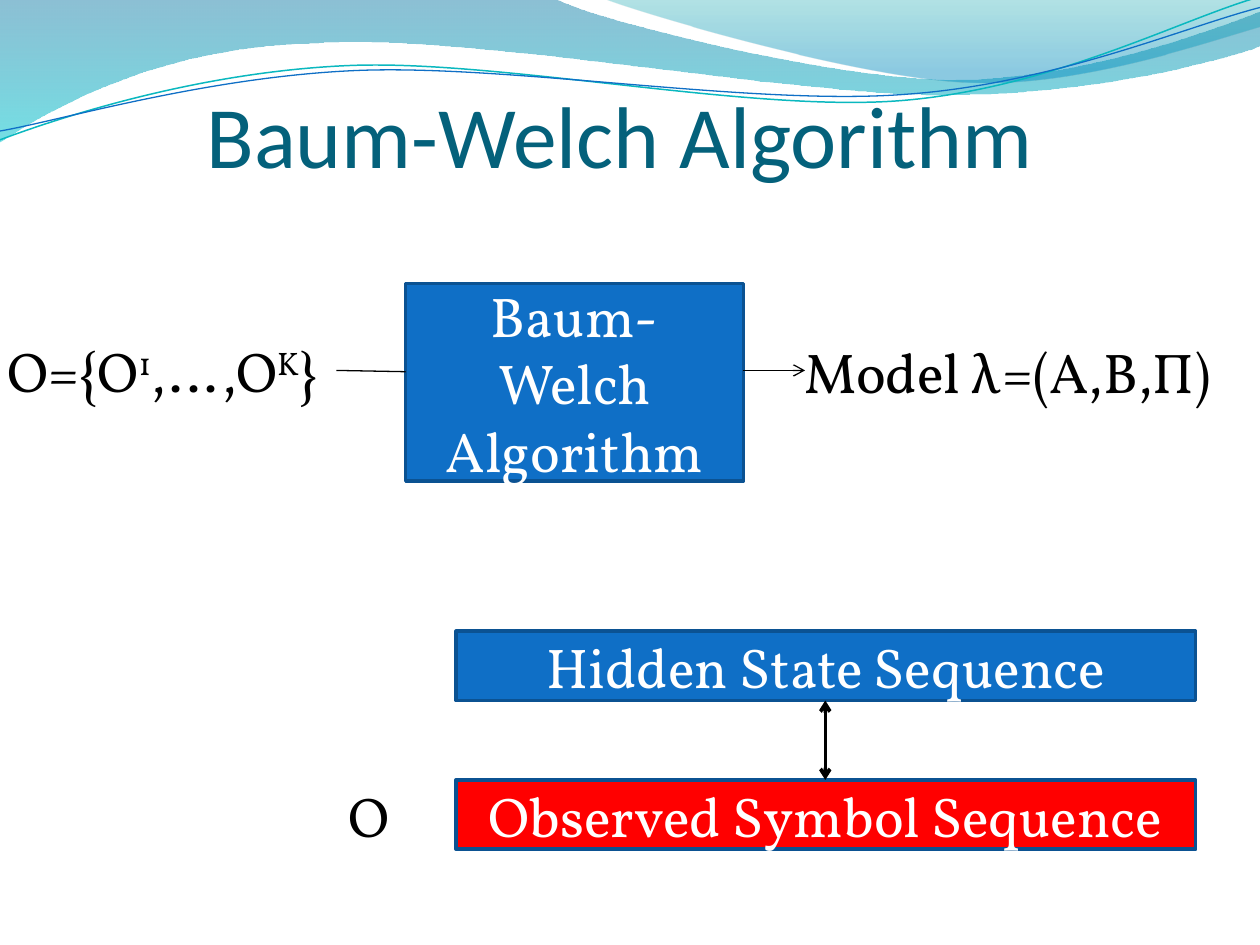
from dataclasses import dataclass
from math import cos, radians, sin

from lxml import etree
from pptx import Presentation
from pptx.dml.color import RGBColor
from pptx.enum.shapes import MSO_CONNECTOR, MSO_SHAPE
from pptx.enum.text import MSO_ANCHOR, MSO_AUTO_SIZE, PP_ALIGN
from pptx.oxml.ns import qn
from pptx.util import Inches, Pt

RECTANGLE = MSO_SHAPE.RECTANGLE
STRAIGHT = MSO_CONNECTOR.STRAIGHT
CENTER, LEFT = PP_ALIGN.CENTER, PP_ALIGN.LEFT
MIDDLE, TOP, BOTTOM = MSO_ANCHOR.MIDDLE, MSO_ANCHOR.TOP, MSO_ANCHOR.BOTTOM
GROW = MSO_AUTO_SIZE.SHAPE_TO_FIT_TEXT

COLORS = {
    "title": "04617B", "blue": "0F6FC6", "border": "0B5292", "red": "FF0000",
    "white": "FFFFFF", "black": "000000", "teal": "0AB8BF",
    "deep_blue": "0074A1", "cyan": "00C6CF", "sea": "00A1A9", "sky": "008BBF",
}
BODY_FONT = {"name": "Vollkorn", "size": Pt(32)}
TITLE_FONT = {"name": "Calibri", "size": Pt(50)}
SUPERSCRIPT = "30000"
TILT = 2.7  # degrees the wave lines are turned counter-clockwise

Point = tuple[float, float]
Run = tuple[str, bool]  # wording, whether it is raised


@dataclass
class Wave:
    """An outline: a start, then segments of one point (line) or three (Bézier)."""
    start: Point
    segments: list[tuple[Point, ...]]
    stops: tuple[tuple[float, str, int], ...] = ()  # position, colour, opacity %
    line: str = ""
    width: float = 0
    pivot: Point = (0, 0)


@dataclass
class Box:
    left: float
    top: float
    width: float
    height: float
    fill: str
    lines: list[str]


@dataclass
class Label:
    left: float
    top: float
    width: float
    height: float
    runs: list[Run]
    wrap: bool = False


@dataclass
class Link:
    start: Point
    end: Point
    width: float = 0.75
    arrow_ends: tuple[str, ...] = ()


WAVES = [
    Wave((0, 0), [
        ((4.4, -0.01),),
        ((4.76, 0.17), (6.64, 0.63), (7.58, 0.63)),
        ((8.53, 0.63), (9.58, 0.26), (10, 0.09)),
        ((10.01, 0.36),),
        ((9.83, 0.44), (8.7, 0.76), (7.46, 0.75)),
        ((6.22, 0.75), (3.82, 0.28), (2.57, 0.34)),
        ((1.29, 0.36), (0.46, 0.83), (-0.01, 1.13)),
        ((0, 0),),
    ], stops=((0, "deep_blue", 45), (1, "cyan", 55))),
    Wave((4.79, -0.01), [
        ((5.09, 0.11), (6.82, 0.62), (7.69, 0.65)),
        ((8.56, 0.69), (9.61, 0.32), (10, 0.21)),
        ((10, 0),),
        ((4.79, -0.01),),
    ], stops=((0, "sea", 30), (0.8, "sky", 45))),
    Wave((0, 1.11), [
        ((0.48, 0.93), (1.58, 0.57), (2.77, 0.52)),
        ((3.95, 0.47), (5.93, 0.89), (7.13, 0.8)),
        ((8.33, 0.71), (9.38, 0.15), (9.98, -0.02)),
    ], line="teal", width=0.85, pivot=(4.99, 0.57)),
    Wave((0, 1.04), [
        ((0.47, 0.96), (1.64, 0.61), (2.83, 0.56)),
        ((4.03, 0.51), (5.97, 0.84), (7.17, 0.75)),
        ((8.36, 0.67), (9.41, 0.21), (10, 0.06)),
    ], line="blue", width=0.75, pivot=(5, 0.59)),
]
DIAGRAM = [
    Box(3.22, 2.25, 2.68, 1.57, "blue", ["Baum-", "Welch", "Algorithm"]),
    Label(-0.04, 2.62, 2.82, 0.64, [("O={O", False), ("1", True), (",…,O", False),
                                    ("K", True), ("}", False)]),
    Link((2.67, 2.94), (3.22, 2.95)),
    Link((5.9, 2.94), (6.39, 2.94), arrow_ends=("tailEnd",)),
    Label(6.29, 2.63, 3.58, 0.64, [("Model λ=(A,B,Π)", False)], wrap=True),
    Box(3.62, 5.01, 5.87, 0.55, "blue", ["Hidden State Sequence"]),
    Box(3.62, 6.19, 5.87, 0.55, "red", ["Observed Symbol Sequence"]),
    Link((6.55, 5.56), (6.55, 6.19), 2, ("headEnd", "tailEnd")),
    Label(2.67, 6.15, 0.55, 0.64, [("O", False)]),
]


def rgb(color: str) -> RGBColor:
    return RGBColor.from_string(COLORS[color])


def turn(point: Point, pivot: Point, degrees: float) -> Point:
    x, y = point[0] - pivot[0], point[1] - pivot[1]
    c, s = cos(radians(degrees)), sin(radians(degrees))
    return pivot[0] + x * c - y * s, pivot[1] + x * s + y * c


def bend(shape, segments: list[tuple[Point, ...]]) -> None:
    """Merge the three straight steps of each Bézier segment into one curve."""
    steps = iter(list(shape._element.spPr.iter(qn("a:lnTo"))))
    for segment in segments:
        first, *others = [next(steps) for _ in segment]
        if others:
            first.tag = qn("a:cubicBezTo")
            for step in others:
                first.append(step[0])
                step.getparent().remove(step)


def add_wave(slide, wave: Wave) -> None:
    tilt = 0 if wave.stops else TILT
    points = [wave.start] + [point for segment in wave.segments for point in segment]
    corners = [(Inches(x), Inches(y))
               for x, y in (turn(point, wave.pivot, tilt) for point in points)]
    builder = slide.shapes.build_freeform(*corners[0])
    builder.add_line_segments(corners[1:], close=bool(wave.stops))
    shape = builder.convert_to_shape()
    bend(shape, wave.segments)
    shape.rotation = -tilt
    shape.shadow.inherit = False
    if not wave.stops:
        shape.fill.background()
        shape.line.color.rgb = rgb(wave.line)
        shape.line.width = Pt(wave.width)
        return
    shape.line.fill.background()
    shape.fill.gradient()
    shape.fill.gradient_angle = 270
    for stop, (position, color, _) in zip(shape.fill.gradient_stops, wave.stops):
        stop.position = position
        stop.color.rgb = rgb(color)
    for node, (_, _, opacity) in zip(shape._element.spPr.iter(qn("a:srgbClr")), wave.stops):
        etree.SubElement(node, qn("a:alpha")).set("val", str(opacity * 1000))


def write(frame, paragraphs: list[list[Run]], font: dict, color: str, align, **frame_format) -> None:
    for attribute, value in frame_format.items():
        setattr(frame, attribute, value)
    for index, runs in enumerate(paragraphs):
        paragraph = frame.add_paragraph() if index else frame.paragraphs[0]
        paragraph.alignment = align
        for wording, raised in runs:
            run = paragraph.add_run()
            run.text = wording
            for attribute, value in font.items():
                setattr(run.font, attribute, value)
            run.font.color.rgb = rgb(color)
            if raised:
                run._r.get_or_add_rPr().set("baseline", SUPERSCRIPT)


def add_title(slide, wording: str) -> None:
    title = slide.shapes.add_textbox(Inches(0.5), Inches(0.5), Inches(9), Inches(0.98))
    write(title.text_frame, [[(wording, False)]], TITLE_FONT, "title", CENTER,
          word_wrap=True, vertical_anchor=BOTTOM, margin_left=0, margin_right=0,
          margin_top=Inches(0.05), margin_bottom=0)


def add_box(slide, box: Box) -> None:
    shape = slide.shapes.add_shape(RECTANGLE, Inches(box.left), Inches(box.top),
                                   Inches(box.width), Inches(box.height))
    shape.shadow.inherit = False
    shape.fill.solid()
    shape.fill.fore_color.rgb = rgb(box.fill)
    shape.line.color.rgb = rgb("border")
    shape.line.width = Pt(2)
    write(shape.text_frame, [[(line, False)] for line in box.lines], BODY_FONT, "white",
          CENTER, word_wrap=True, vertical_anchor=MIDDLE)


def add_label(slide, label: Label) -> None:
    textbox = slide.shapes.add_textbox(Inches(label.left), Inches(label.top),
                                       Inches(label.width), Inches(label.height))
    write(textbox.text_frame, [label.runs], BODY_FONT, "black", LEFT,
          word_wrap=label.wrap, vertical_anchor=TOP, auto_size=GROW)


def add_link(slide, link: Link) -> None:
    ends = [Inches(value) for value in link.start + link.end]
    connector = slide.shapes.add_connector(STRAIGHT, *ends)
    connector.line.color.rgb = rgb("black")
    connector.line.width = Pt(link.width)
    for end in link.arrow_ends:
        etree.SubElement(connector.line._get_or_add_ln(), qn(f"a:{end}")).set("type", "arrow")
    etree.SubElement(connector._element.spPr, qn("a:effectLst"))


def main() -> None:
    deck = Presentation()
    deck.slide_width, deck.slide_height = Inches(10), Inches(7.5)
    slide = deck.slides.add_slide(deck.slide_layouts[6])
    for wave in WAVES:
        add_wave(slide, wave)
    add_title(slide, "Baum-Welch Algorithm ")
    draw = {Box: add_box, Label: add_label, Link: add_link}
    for part in DIAGRAM:
        draw[type(part)](slide, part)
    deck.save("out.pptx")


if __name__ == "__main__":
    main()
